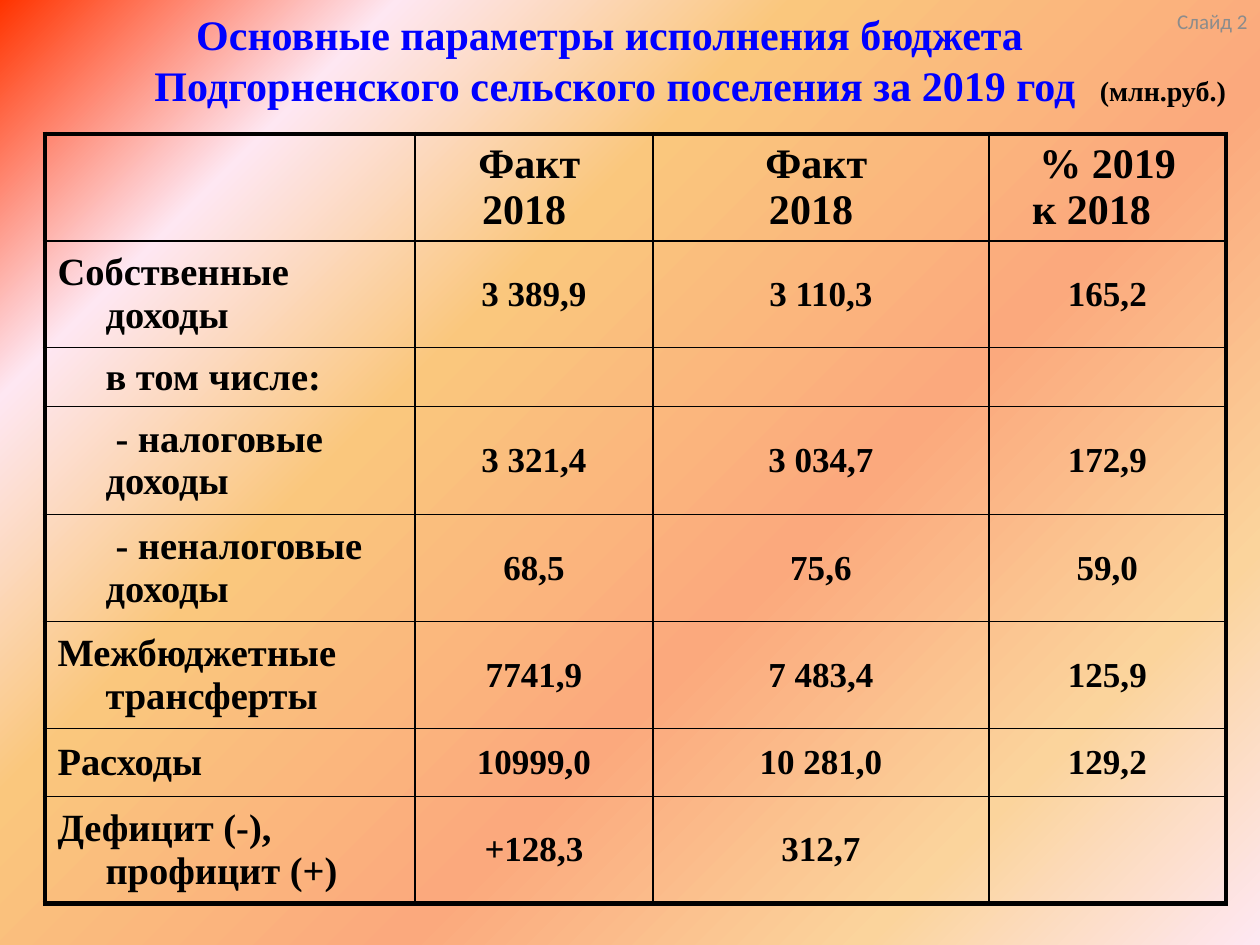
from lxml.etree import SubElement
from pptx import Presentation
from pptx.dml.color import RGBColor
from pptx.enum.text import MSO_ANCHOR, PP_ALIGN
from pptx.oxml.ns import qn
from pptx.util import Pt

EMU_PER_PX = 914400 / 126
BLUE = RGBColor(0x00, 0x00, 0xFF)
BLACK = RGBColor(0x00, 0x00, 0x00)
GRAY = RGBColor(0x8C, 0x8C, 0x8C)
RED = RGBColor(0xFF, 0x33, 0x00)
PINK = RGBColor(0xFE, 0xE7, 0xF2)
AMBER = RGBColor(0xFA, 0xC7, 0x7D)
CORAL = RGBColor(0xFB, 0xA9, 0x7D)
SAND = RGBColor(0xFB, 0xD4, 0x9C)

STOPS = [(0, RED), (18, PINK), (36, AMBER), (61, CORAL), (82, SAND), (100, PINK)]
COLS = [370, 238, 336, 237]
ROWS = [106, 107, 59, 108, 107, 107, 68, 107]
THICK, NORMAL, THIN = 3, 1, 0.5
THIN_BELOW = (3, 5)
HANG = 48
# header text, extra right margin, left margin of the first line
HEADERS = [("", 0, 0), ("Факт\n2018 ", 10, 0), ("Факт\n2018 ", 10, 0),
           ("% 2019\nк 2018 ", 22, 22)]
# label, first-line indent, values
BODY = [
    ("Собственные доходы", -HANG, "3 389,9", "3 110,3", "165,2"),
    ("в том числе:", 0, "", "", ""),
    ("- налоговые доходы", 10, "3 321,4", "3 034,7", "172,9"),
    ("- неналоговые доходы", 10, "68,5", "75,6", "59,0"),
    ("Межбюджетные трансферты", -HANG, "7741,9", "7 483,4", "125,9"),
    ("Расходы", -HANG, "10999,0", "10 281,0", "129,2"),
    ("Дефицит (-), профицит (+)", -HANG, "+128,3", "312,7", ""),
]


def px(n):
    return round(n * EMU_PER_PX)


class SlideBuilder:
    font = "Times New Roman"

    def __init__(self, prs):
        self.s = prs.slides.add_slide(prs.slide_layouts[6])

    def background(self, stops, angle):
        fill = self.s.background.fill
        fill.gradient()
        fill.gradient_angle = -angle % 360
        grad = self.s.element.find(".//" + qn("a:gradFill"))
        gs_lst = grad.find(qn("a:gsLst"))
        for gs in list(gs_lst):
            gs_lst.remove(gs)
        for pos, color in stops:
            gs = SubElement(gs_lst, qn("a:gs"), pos=str(pos * 1000))
            SubElement(gs, qn("a:srgbClr"), val=str(color))
        grad.find(qn("a:lin")).set("scaled", "0")

    def set_text(self, tf, text, size, color=BLACK, align=PP_ALIGN.CENTER,
                 font=font, bold=True):
        tf.text = text
        for p in tf.paragraphs:
            p.alignment = align
            for r in p.runs:
                r.font.size, r.font.name, r.font.bold = Pt(size), font, bold
                r.font.color.rgb = color

    def text(self, x, y, w, h, text, size, wrap=True, **style):
        tf = self.s.shapes.add_textbox(px(x), px(y), px(w), px(h)).text_frame
        tf.word_wrap = wrap
        tf.vertical_anchor = MSO_ANCHOR.MIDDLE
        self.set_text(tf, text, size, **style)

    def table(self, x, y, cols, rows):
        frame = self.s.shapes.add_table(len(rows), len(cols), px(x), px(y),
                                        px(sum(cols)), px(sum(rows)))
        table = frame.table
        table.first_row = table.horz_banding = False
        for column, w in zip(table.columns, cols):
            column.width = px(w)
        for row, h in zip(table.rows, rows):
            row.height = px(h)
        for i in range(len(rows)):
            for j in range(len(cols)):
                cell = table.cell(i, j)
                cell.vertical_anchor = MSO_ANCHOR.MIDDLE
                below = THIN if i in THIN_BELOW else NORMAL
                above = THIN if i - 1 in THIN_BELOW else NORMAL
                self.borders(cell, {
                    "L": THICK if j == 0 else NORMAL,
                    "R": THICK if j == len(cols) - 1 else NORMAL,
                    "T": THICK if i == 0 else above,
                    "B": THICK if i == len(rows) - 1 else below,
                })
                cell.fill.background()
        return table

    def borders(self, cell, widths):
        tcPr = cell._tc.get_or_add_tcPr()
        for side, width in widths.items():
            ln = SubElement(tcPr, qn("a:ln" + side), w=str(int(Pt(width))))
            fill = SubElement(ln, qn("a:solidFill"))
            SubElement(fill, qn("a:srgbClr"), val=str(BLACK))

    def indent(self, p, left, first=0):
        pPr = p._p.get_or_add_pPr()
        pPr.set("marL", str(px(left)))
        pPr.set("indent", str(px(first)))


def main():
    prs = Presentation()
    prs.slide_width, prs.slide_height = px(1260), px(945)
    b = SlideBuilder(prs)
    b.background(STOPS, 45)

    # Title and slide label
    b.text(0, 0, 1230, 118, "Основные параметры исполнения бюджета \v"
           "Подгорненского сельского поселения за 2019 год", 24, color=BLUE)
    b.text(1155, 0, 105, 42, "Слайд 2", 12, color=GRAY, align=PP_ALIGN.RIGHT,
           font="Calibri", bold=False)

    # Budget table
    table = b.table(45, 134, COLS, ROWS)
    for j, (text, right, left) in enumerate(HEADERS):
        cell = table.cell(0, j)
        cell.margin_top = cell.margin_bottom = px(3)
        cell.margin_right = px(12 + right)
        b.set_text(cell.text_frame, text, 24)
        b.indent(cell.text_frame.paragraphs[0], left)
    for i, (label, first, *values) in enumerate(BODY, start=1):
        tf = table.cell(i, 0).text_frame
        b.set_text(tf, label, 22, align=PP_ALIGN.LEFT)
        b.indent(tf.paragraphs[0], HANG, first)
        for j, value in enumerate(values, start=1):
            b.set_text(table.cell(i, j).text_frame, value, 20)

    # Units
    b.text(1086, 66, 154, 49, "(млн.руб.)", 16, wrap=False)
    prs.save("out.pptx")


if __name__ == "__main__":
    main()
